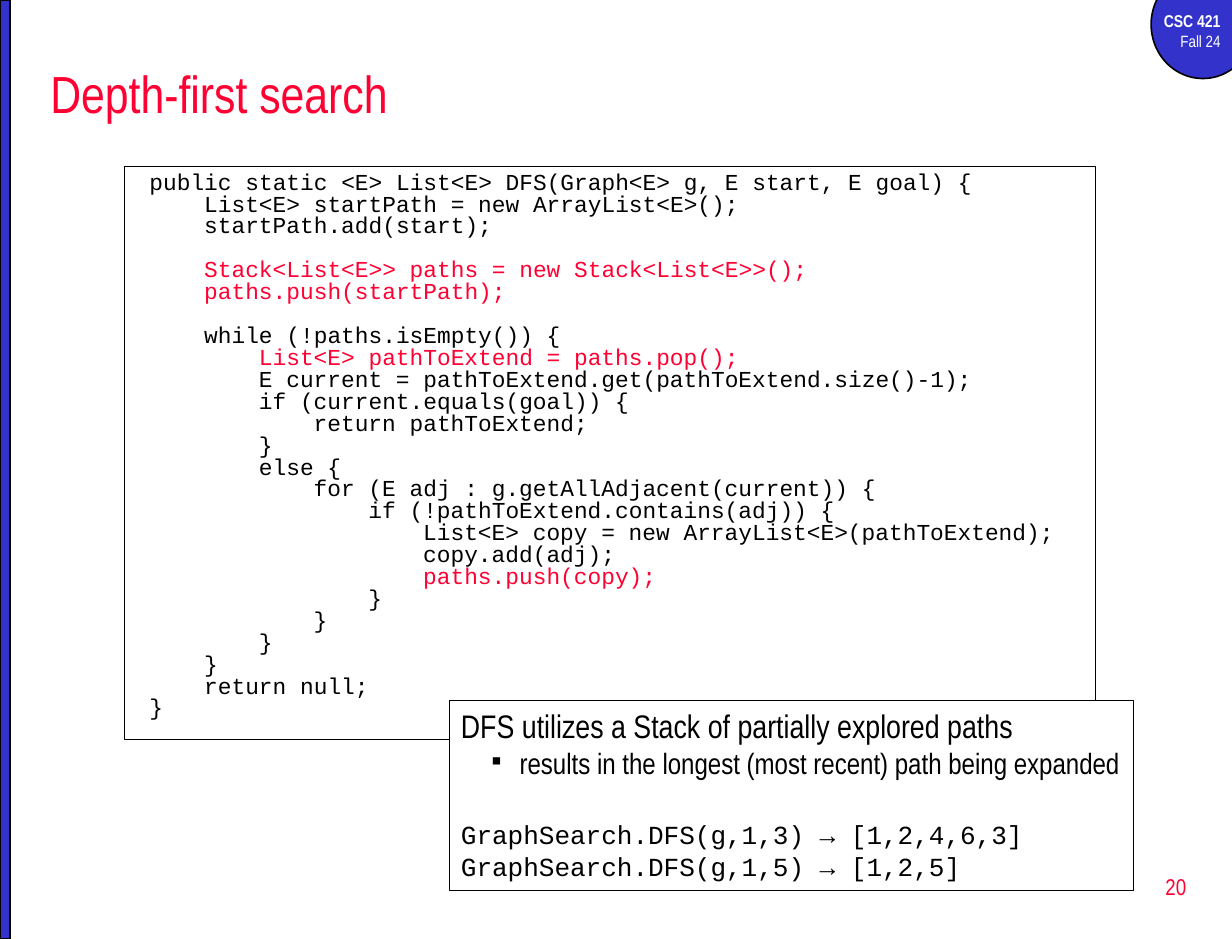
from dataclasses import dataclass

from lxml import etree
from pptx import Presentation
from pptx.dml.color import RGBColor
from pptx.enum.shapes import MSO_SHAPE
from pptx.enum.text import MSO_ANCHOR, PP_ALIGN
from pptx.oxml.ns import qn
from pptx.util import Cm, Pt

RECTANGLE = MSO_SHAPE.RECTANGLE
OVAL = MSO_SHAPE.OVAL
LEFT, RIGHT = PP_ALIGN.LEFT, PP_ALIGN.RIGHT
TOP, MIDDLE = MSO_ANCHOR.TOP, MSO_ANCHOR.MIDDLE

BLACK, WHITE, BLUE, RED = "000000", "FFFFFF", "3333CC", "FF0033"
SANS, MONO = "Arial Narrow", "Courier New"
WIDTH, HEIGHT = 26.67, 20.32
CODE_SIZE = 14
CODE_SPACING = 0.8
CODE_GAP = 13.5
CHARACTER_CM = CODE_SIZE * 0.6 * 2.54 / 72
TAB_CHARACTERS = 4


@dataclass(frozen=True)
class Area:
    left: float
    top: float
    width: float
    height: float


@dataclass(frozen=True)
class Line:
    text: str
    size: float
    font: str = SANS
    color: str = BLACK
    bold: bool = False
    align: PP_ALIGN = LEFT
    margin: float = 0
    hanging: float = 0
    bullet: str = ""
    gap: float = 0
    spacing: float = 1


@dataclass(frozen=True)
class Code:
    depth: int
    text: str
    color: str = BLACK
    gap: float = 0


CODE = [
    Code(0, "public static <E> List<E> DFS(Graph<E> g, E start, E goal) {"),
    Code(1, "List<E> startPath = new ArrayList<E>();"),
    Code(1, "startPath.add(start);"),
    Code(1, "Stack<List<E>> paths = new Stack<List<E>>();", RED, CODE_GAP),
    Code(1, "paths.push(startPath);", RED),
    Code(1, "while (!paths.isEmpty()) {", gap=CODE_GAP),
    Code(2, "List<E> pathToExtend = paths.pop();", RED),
    Code(2, "E current = pathToExtend.get(pathToExtend.size()-1);"),
    Code(2, "if (current.equals(goal)) {"),
    Code(3, "return pathToExtend;"),
    Code(2, "}"),
    Code(2, "else {"),
    Code(3, "for (E adj : g.getAllAdjacent(current)) {"),
    Code(4, "if (!pathToExtend.contains(adj)) {"),
    Code(5, "List<E> copy = new ArrayList<E>(pathToExtend);"),
    Code(5, "copy.add(adj);"),
    Code(5, "paths.push(copy);", RED),
    Code(4, "}"),
    Code(3, "}"),
    Code(2, "}"),
    Code(1, "}"),
    Code(1, "return null;"),
    Code(0, "}"),
]

NOTES = [
    Line("DFS utilizes a Stack of partially explored paths", 20),
    Line("results in the longest (most recent) path being expanded", 18,
         margin=1.27, hanging=0.61, bullet="▪"),
    Line("GraphSearch.DFS(g,1,3) → [1,2,4,6,3]", 16, MONO, gap=23),
    Line("GraphSearch.DFS(g,1,5) → [1,2,5]", 16, MONO, gap=0.5),
]


def rgb(color: str) -> RGBColor:
    return RGBColor.from_string(color)


def code_line(code: Code) -> Line:
    margin = (1 + TAB_CHARACTERS * code.depth) * CHARACTER_CM
    return Line(code.text, CODE_SIZE, MONO, code.color, margin=margin,
                gap=code.gap, spacing=CODE_SPACING)


def write(shape, lines: list[Line], anchor: MSO_ANCHOR = TOP) -> None:
    frame = shape.text_frame
    frame.word_wrap = True
    frame.vertical_anchor = anchor
    for index, line in enumerate(lines):
        para = frame.add_paragraph() if index else frame.paragraphs[0]
        para.alignment = line.align
        para.line_spacing = line.spacing
        para.space_before = Pt(line.gap)
        properties = para._p.get_or_add_pPr()
        properties.set("marL", str(Cm(line.margin)))
        properties.set("indent", str(-Cm(line.hanging)))
        if line.bullet:
            etree.SubElement(properties, qn("a:buFont")).set("typeface", line.font)
            etree.SubElement(properties, qn("a:buChar")).set("char", line.bullet)
        span = para.add_run()
        span.text = line.text
        span.font.name = line.font
        span.font.size = Pt(line.size)
        span.font.bold = line.bold
        span.font.color.rgb = rgb(line.color)


def add_panel(page, kind: MSO_SHAPE, area: Area, fill: str, border: float):
    panel = page.shapes.add_shape(kind, Cm(area.left), Cm(area.top),
                                  Cm(area.width), Cm(area.height))
    panel.shadow.inherit = False
    if fill:
        panel.fill.solid()
        panel.fill.fore_color.rgb = rgb(fill)
    else:
        panel.fill.background()
    panel.line.color.rgb = rgb(BLACK)
    panel.line.width = Pt(border)
    return panel


def add_text(page, area: Area, lines: list[Line], anchor: MSO_ANCHOR) -> None:
    box = page.shapes.add_textbox(Cm(area.left), Cm(area.top),
                                  Cm(area.width), Cm(area.height))
    write(box, lines, anchor)


def main() -> None:
    deck = Presentation()
    deck.slide_width, deck.slide_height = Cm(WIDTH), Cm(HEIGHT)
    page = deck.slides.add_slide(deck.slide_layouts[6])

    add_panel(page, OVAL, Area(24.92, -0.64, 2.24, 2.34), BLUE, 1)
    course = [Line("CSC 421", 10.5, color=WHITE, bold=True, align=RIGHT),
              Line("Fall 24", 10, color=WHITE, align=RIGHT)]
    add_text(page, Area(24.56, 0.1, 2.11, 1.17), course, TOP)
    add_panel(page, RECTANGLE, Area(0, 0, 0.22, HEIGHT), BLUE, 1)

    title = Line("Depth-first search", 32, color=RED)
    add_text(page, Area(0.84, 1.06, 25.2, 1.9), [title], MIDDLE)
    number = Line("20", 14, color=RED, align=RIGHT)
    add_text(page, Area(20.37, 18.51, 5.56, 1.35), [number], MIDDLE)

    listing = add_panel(page, RECTANGLE, Area(2.69, 3.61, 21.03, 12.4), "", 0.75)
    write(listing, [code_line(code) for code in CODE])
    summary = add_panel(page, RECTANGLE, Area(9.73, 15.16, 14.81, 4.11), WHITE, 0.75)
    write(summary, NOTES)

    deck.save("out.pptx")


if __name__ == "__main__":
    main()
